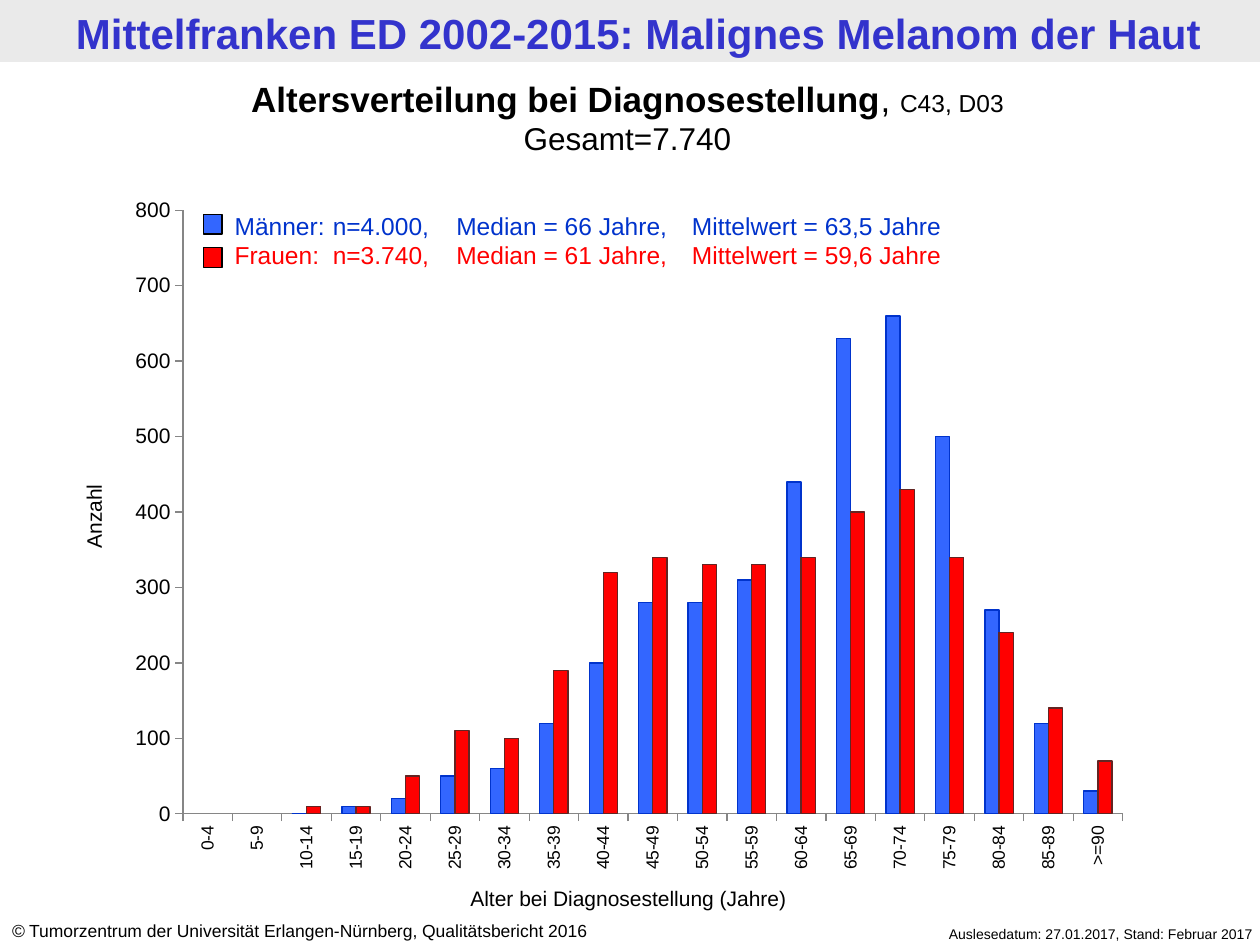
import pptx
import pptx.chart.data
import pptx.dml.color
import pptx.enum.chart
import pptx.enum.shapes
import pptx.enum.text
import pptx.oxml
import pptx.oxml.ns
import pptx.util
from pptx.util import Cm

BLACK, BLUE, RED = "000000", "0033CC", "FF0000"
MALE_FILL, AXIS_GREY = "3366FF", "868686"
ALIGN = pptx.enum.text.PP_ALIGN


def rgb(value):
    return pptx.dml.color.RGBColor.from_string(value)


def add_text(box, paragraphs, align=ALIGN.LEFT, rotation=0, tabs=()):
    """Each paragraph is a list of (text, size, colour, extra font values)."""
    label = slide.shapes.add_textbox(*[Cm(length) for length in box])
    label.rotation = rotation
    frame = label.text_frame
    frame.word_wrap = True
    for index, runs in enumerate(paragraphs):
        paragraph = frame.paragraphs[0] if index == 0 else frame.add_paragraph()
        paragraph.alignment = align
        if tabs:
            properties = paragraph._p.get_or_add_pPr()
            tab_list = pptx.oxml.parse_xml(
                f"<a:tabLst {pptx.oxml.ns.nsdecls('a')}>"
                + "".join(f'<a:tab pos="{Cm(stop)}" algn="l"/>' for stop in tabs)
                + "</a:tabLst>")
            properties.append(tab_list)
        for text, size, colour, extra in runs:
            run = paragraph.add_run()
            run.text = text
            run.font.color.rgb = rgb(colour)
            values = {"name": "Arial", "size": pptx.util.Pt(size), **extra}
            for attribute, value in values.items():
                setattr(run.font, attribute, value)


presentation = pptx.Presentation()
presentation.slide_width, presentation.slide_height = Cm(25.4), Cm(19.05)
slide = presentation.slides.add_slide(presentation.slide_layouts[6])

# Header band and title
band = slide.shapes.add_shape(
    pptx.enum.shapes.MSO_SHAPE.RECTANGLE, 0, 0, Cm(25.4), Cm(1.25))
band.shadow.inherit = False
band.fill.solid()
band.fill.fore_color.rgb = rgb("EAEAEA")
band.line.fill.background()
add_text((0.17, 0.03, 25.4, 1.25),
         [[("Mittelfranken ED 2002-2015: Malignes Melanom der Haut",
            24, "3333CC", {"bold": True})]], ALIGN.CENTER)

# Footer
add_text((-0.01, 18.42, 13.31, 0.68),
         [[("©", 10, BLACK, {"italic": True}),
           (" Tumorzentrum der Universität Erlangen-Nürnberg, "
            "Qualitätsbericht 2016", 10, BLACK, {})]])
add_text((16.91, 18.53, 8.6, 0.6),
         [[("Auslesedatum: 27.01.2017, Stand: Februar 2017", 8, BLACK, {})]],
         ALIGN.RIGHT)

# Age distribution: new cases per five-year group, rounded to tens
ages = [f"{start}-{start + 4}" for start in range(0, 90, 5)] + [">=90"]
men = [None, None, 0, 10, 20, 50, 60, 120, 200, 280, 280, 310, 440, 630, 660,
       500, 270, 120, 30]
women = [None, None, 10, 10, 50, 110, 100, 190, 320, 340, 330, 330, 340, 400,
         430, 340, 240, 140, 70]
distribution = pptx.chart.data.CategoryChartData()
distribution.categories = ages
distribution.add_series("Männer", men)
distribution.add_series("Frauen", women)
chart = slide.shapes.add_chart(
    pptx.enum.chart.XL_CHART_TYPE.COLUMN_CLUSTERED,
    Cm(2.33), Cm(3.74), Cm(20.73), Cm(14.1), distribution).chart
chart.has_legend = False
chart.has_title = False
chart.font.name = "Calibri"
chart.font.size = pptx.util.Pt(18)
chart.font.color.rgb = rgb(BLACK)

# Bars
bars = chart.plots[0]
for attribute, value in {"gap_width": 150, "overlap": 0,
                         "vary_by_categories": False}.items():
    setattr(bars, attribute, value)
for series, fill, outline in zip(bars.series, (MALE_FILL, RED), (BLUE, "632523")):
    series.invert_if_negative = False
    series.format.fill.solid()
    series.format.fill.fore_color.rgb = rgb(fill)
    series.format.line.color.rgb = rgb(outline)
    series.format.line.width = pptx.util.Pt(0.75)

# Axes
count_scale = {"minimum_scale": 0, "maximum_scale": 800, "major_unit": 100}
for axis, size, scale in ((chart.category_axis, 10, {}),
                          (chart.value_axis, 12, count_scale)):
    values = {"has_major_gridlines": False,
              "major_tick_mark": pptx.enum.chart.XL_TICK_MARK.OUTSIDE,
              "minor_tick_mark": pptx.enum.chart.XL_TICK_MARK.NONE, **scale}
    for attribute, value in values.items():
        setattr(axis, attribute, value)
    axis.format.line.color.rgb = rgb(AXIS_GREY)
    axis.format.line.width = pptx.util.Pt(0.75)
    axis.tick_labels.font.name = "Arial"
    axis.tick_labels.font.size = pptx.util.Pt(size)
    axis.tick_labels.font.color.rgb = rgb(BLACK)
age_label_body = chart.category_axis._element.txPr.find(pptx.oxml.ns.qn("a:bodyPr"))
age_label_body.set("rot", "-5400000")
age_label_body.set("vert", "horz")

# Fixed inner plot area with a white ground
plot_area = chart._chartSpace.chart.plotArea
for old_layout in plot_area.findall(pptx.oxml.ns.qn("c:layout")):
    plot_area.remove(old_layout)
plot_area.insert(0, pptx.oxml.parse_xml(
    f"<c:layout {pptx.oxml.ns.nsdecls('c')}><c:manualLayout>"
    '<c:layoutTarget val="inner"/><c:xMode val="edge"/><c:yMode val="edge"/>'
    '<c:x val="0.0655"/><c:y val="0.0355"/><c:w val="0.914"/><c:h val="0.863"/>'
    "</c:manualLayout></c:layout>"))
plot_area.append(pptx.oxml.parse_xml(
    f"<c:spPr {pptx.oxml.ns.nsdecls('c', 'a')}><a:solidFill>"
    '<a:srgbClr val="FFFFFF"/></a:solidFill></c:spPr>'))

# Heading
add_text((-0.1, 1.43, 25.5, 1.88),
         [[("Altersverteilung bei Diagnosestellung", 20, BLACK, {"bold": True}),
           (", ", 20, BLACK, {}), ("C43, D03", 14, BLACK, {})],
          [("Gesamt=7.740", 18, BLACK, {})]], ALIGN.CENTER)

# Key with statistics
add_text((4.48, 4.13, 17.4, 1.45),
         [[("Männer: \tn=4.000,\tMedian = 66 Jahre,\tMittelwert = 63,5 Jahre",
            14, BLUE, {})],
          [("Frauen: \tn=3.740,\tMedian = 61 Jahre,\tMittelwert = 59,6 Jahre",
            14, RED, {})]], tabs=(1.98, 2.24, 4.47, 9.22))
for row, fill in enumerate((MALE_FILL, RED)):
    swatch = slide.shapes.add_shape(
        pptx.enum.shapes.MSO_SHAPE.RECTANGLE,
        Cm(4.1), Cm(4.32 + row * 0.67), Cm(0.38), Cm(0.4))
    swatch.shadow.inherit = False
    swatch.fill.solid()
    swatch.fill.fore_color.rgb = rgb(fill)
    swatch.line.color.rgb = rgb(BLACK)
    swatch.line.width = pptx.util.Pt(0.75)

# Axis titles
add_text((8.77, 17.73, 7.8, 0.76),
         [[("Alter bei Diagnosestellung (Jahre)", 12, BLACK, {})]], ALIGN.CENTER)
add_text((-1.43, 10.03, 6.63, 0.76), [[("Anzahl", 12, BLACK, {})]],
         ALIGN.CENTER, rotation=270)

presentation.save("out.pptx")
